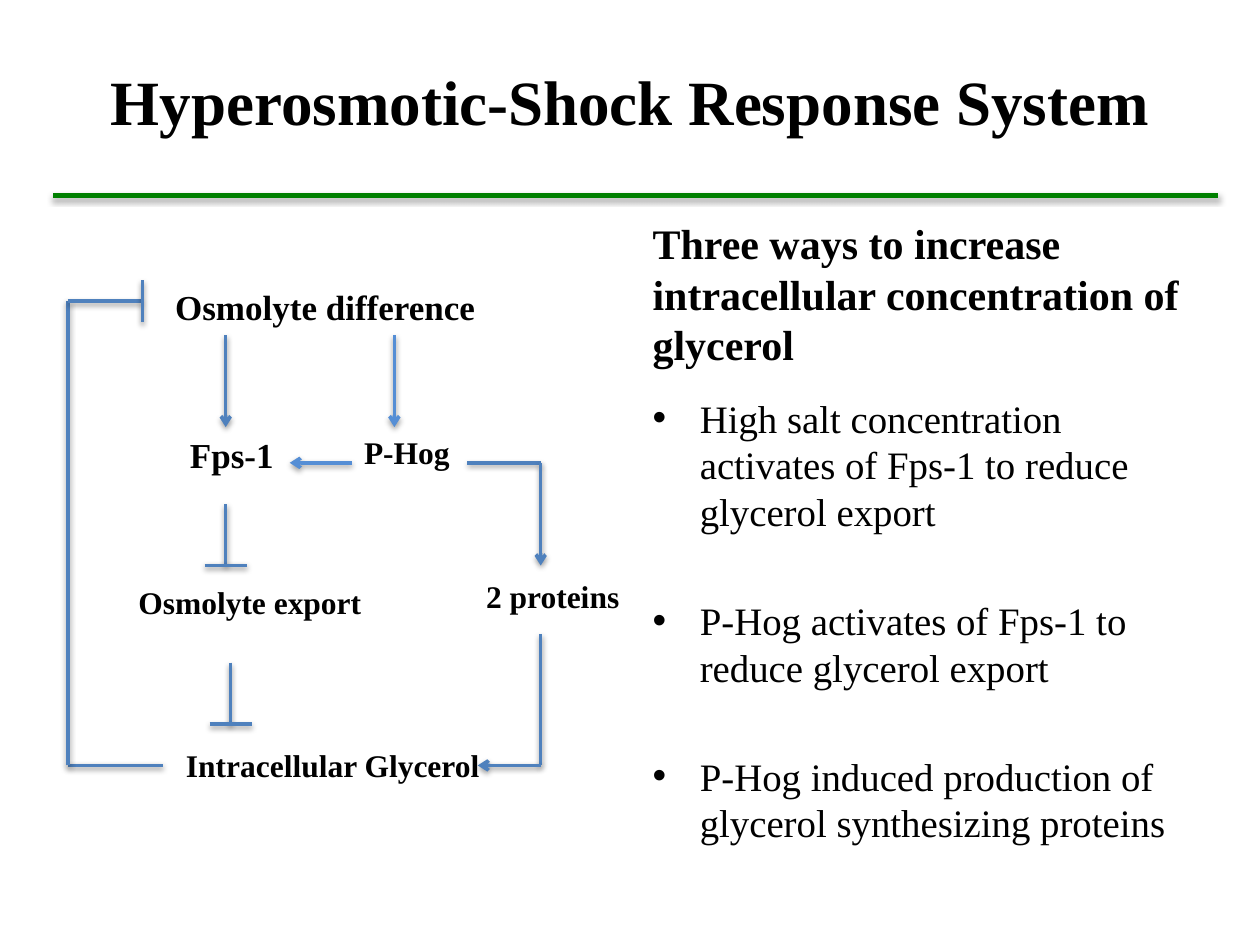
from itertools import pairwise

from lxml import etree
from pptx import Presentation
from pptx import util as u
from pptx.dml.color import RGBColor
from pptx.enum import shapes, text
from pptx.oxml.ns import qn

FONT = "Times New Roman"
BLACK, GREEN, BLUE, LIGHT_BLUE = "000000", "008000", "4F81BD", "558ED5"
BAR_LENGTH = 0.85

# Positions in cm shared by the parts of the pathway
FPS_X, HOG_X, PROTEIN_X, FEEDBACK_X = 4.55, 7.95, 10.9, 1.37
HOG_Y, GLYCEROL_Y, FEEDBACK_Y = 9.33, 15.43, 6.07

LABELS = [
    ("Osmolyte difference", 3.28, 5.64, 8.69, 20),
    ("Osmolyte export", 2.54, 11.63, 7.19, 18),
    ("Fps-1", 3.58, 8.61, 4.88, 20),
    ("P-Hog", 7.09, 8.61, 4.88, 18),
    ("Intracellular Glycerol", 3.5, 14.91, 8.46, 18),
    ("2 proteins", 9.55, 11.51, 4.65, 18),
]
WAYS = [
    "High salt concentration activates of Fps-1 to reduce glycerol export",
    "P-Hog activates of Fps-1 to reduce glycerol export",
    "P-Hog induced production of glycerol synthesizing proteins",
]


def color(value):
    return RGBColor.from_string(value)


def format_paragraph(paragraph, size, bold):
    font = paragraph.font
    font.name, font.size, font.bold = FONT, u.Pt(size), bold
    font.color.rgb = color(BLACK)


def fill_placeholder(shape, box, lines, size, bold, pitch=None, gap=0):
    """Place the shape and write one paragraph per line, gap points apart."""
    shape.left, shape.top, shape.width, shape.height = map(u.Cm, box)
    frame = shape.text_frame
    frame.text = "\n".join(lines)
    frame.auto_size = text.MSO_AUTO_SIZE.NONE
    for index, paragraph in enumerate(frame.paragraphs):
        format_paragraph(paragraph, size, bold)
        paragraph.space_before = u.Pt(gap if index else 0)
        if pitch:
            paragraph.line_spacing = u.Pt(pitch)


def add_label(slide, wording, left, top, width, size):
    box = slide.shapes.add_textbox(
        u.Cm(left), u.Cm(top), u.Cm(width), u.Cm(1.12 if size == 20 else 1.02))
    box.text_frame.word_wrap = True
    box.text_frame.text = wording
    format_paragraph(box.text_frame.paragraphs[0], size, True)


def add_line(slide, start, end, stroke=BLUE, width=2):
    connector = slide.shapes.add_connector(
        shapes.MSO_CONNECTOR.STRAIGHT, *map(u.Cm, (*start, *end)))
    connector.line.color.rgb = color(stroke)
    connector.line.width = u.Pt(width)
    return connector


def add_route(slide, *points, stroke=BLUE, arrow=True):
    """Join the points with lines, the last one ending in an arrowhead."""
    for start, end in pairwise(points):
        connector = add_line(slide, start, end, stroke)
    if arrow:
        outline = connector.line._get_or_add_ln()
        etree.SubElement(outline, qn("a:tailEnd"), type="arrow")


def add_inhibition(slide, *points):
    """Draw a route that ends in a bar across its last line."""
    add_route(slide, *points, arrow=False)
    (before_x, _), (x, y) = points[-2:]
    half = BAR_LENGTH / 2
    across_x, across_y = (half, 0) if before_x == x else (0, half)
    add_line(slide, (x - across_x, y - across_y), (x + across_x, y + across_y))


def add_pathway(slide):
    for label in LABELS:
        add_label(slide, *label)
    add_route(slide, (FPS_X, 6.76), (FPS_X, 8.61))
    add_route(slide, (HOG_X, 6.76), (HOG_X, 8.61), stroke=LIGHT_BLUE)
    add_route(slide, (7.09, HOG_Y), (5.84, HOG_Y), stroke=LIGHT_BLUE)
    add_route(slide, (9.42, HOG_Y), (PROTEIN_X, HOG_Y), (PROTEIN_X, 11.4))
    add_route(slide, (PROTEIN_X, 12.78), (PROTEIN_X, GLYCEROL_Y),
              (9.63, GLYCEROL_Y))
    add_inhibition(slide, (FPS_X, 10.16), (FPS_X, 11.4))
    add_inhibition(slide, (4.65, 13.36), (4.65, 14.6))
    add_inhibition(slide, (3.28, GLYCEROL_Y), (FEEDBACK_X, GLYCEROL_Y),
                   (FEEDBACK_X, FEEDBACK_Y), (2.87, FEEDBACK_Y))


def main():
    presentation = Presentation()
    presentation.slide_width, presentation.slide_height = u.Cm(25.4), u.Cm(19.05)
    comparison_layout = presentation.slide_layouts[4]
    slide = presentation.slides.add_slide(comparison_layout)
    holders = {shape.placeholder_format.idx: shape for shape in slide.placeholders}

    fill_placeholder(holders[0], (1.27, 0.43, 22.86, 3.18),
                     ["Hyperosmotic-Shock Response System"], 36, True)
    fill_placeholder(
        holders[3], (12.9, 4.27, 11.23, 3.3),
        ["Three ways to increase intracellular concentration of glycerol"],
        24, True, pitch=28.9)
    fill_placeholder(holders[4], (12.9, 7.82, 11.23, 9.2), WAYS,
                     22.2, False, pitch=26.7, gap=35.5)
    for index in (1, 2):
        unused = holders[index].element
        unused.getparent().remove(unused)

    add_line(slide, (1.07, 3.94), (24.56, 3.94), GREEN, 3)
    add_pathway(slide)
    presentation.save("out.pptx")


if __name__ == "__main__":
    main()
